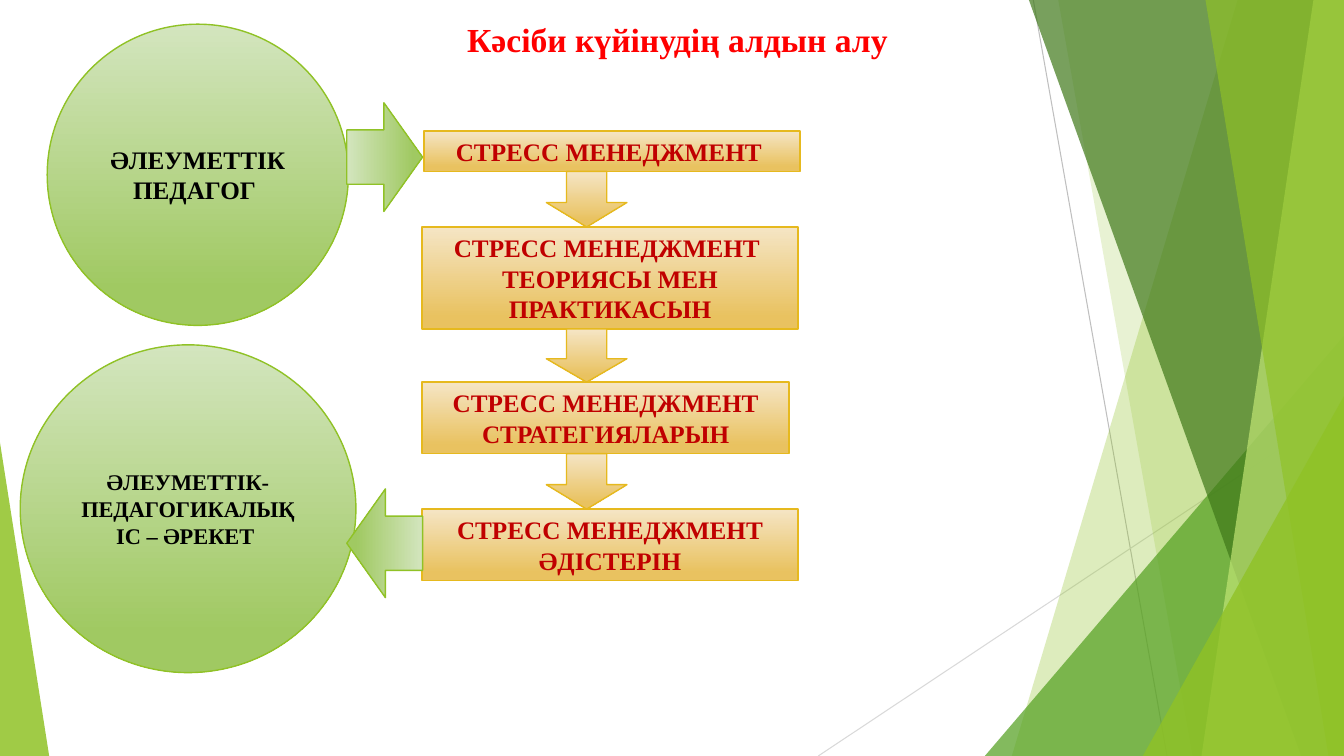
from dataclasses import dataclass
from itertools import pairwise
from lxml.etree import SubElement
from pptx import Presentation
from pptx.dml.color import RGBColor as Rgb
from pptx.enum.shapes import MSO_CONNECTOR as Link, MSO_SHAPE as Kind
from pptx.enum.text import MSO_ANCHOR as Anchor, MSO_AUTO_SIZE as Auto, PP_ALIGN as Align
from pptx.oxml.ns import qn
from pptx.util import Cm, Pt

WIDE, HIGH = 33.87, 19.05  # all lengths in cm

TITLE = "Кәсіби күйінудің алдын алу "
TITLE_AT = (8.71, 0.36, 16.94, 1.27)

# place, paragraphs
STEPS = [
    ((10.69, 3.3, 9.47, 1.02), ["СТРЕСС МЕНЕДЖМЕНТ "]),
    ((10.64, 5.72, 9.47, 2.57), ["СТРЕСС МЕНЕДЖМЕНТ ", "ТЕОРИЯСЫ МЕН ПРАКТИКАСЫН"]),
    ((10.64, 9.63, 9.25, 1.8), ["СТРЕСС МЕНЕДЖМЕНТ СТРАТЕГИЯЛАРЫН"]),
    ((10.64, 12.83, 9.47, 1.8), ["СТРЕСС МЕНЕДЖМЕНТ ӘДІСТЕРІН"]),
]
DOWN_LEFT, DOWN_WIDE = 13.77, 2.03

# place, text, size role
ROLES = [
    ((1.19, 0.61, 7.59, 7.59), "ӘЛЕУМЕТТІК ПЕДАГОГ ", "body"),
    ((0.51, 8.69, 8.46, 8.26), "ӘЛЕУМЕТТІК-ПЕДАГОГИКАЛЫҚ ІС – ӘРЕКЕТ ", "small"),
]
# preset, top, gradient angle
SIDES = [(Kind.RIGHT_ARROW, 2.59, 0), (Kind.LEFT_ARROW, 12.32, 180)]
SIDE_LEFT, SIDE_WIDE, SIDE_HIGH = 8.74, 1.91, 2.74

# start, end, colour
RAYS = [
    ((26.04, 0), (29.41, HIGH), "BFBFBF"),
    ((WIDE, 10.24), (20.62, HIGH), "D9D9D9"),
]
# corner points, colour, opacity in percent
FACETS = [
    ([(31.19, 0), (WIDE, 0), (WIDE, HIGH), (25.5, HIGH)], "90C226", 30),
    ([(26.67, 0), (WIDE, 0), (WIDE, HIGH), (30.05, HIGH)], "90C226", 20),
    ([(WIDE, 8.46), (WIDE, HIGH), (24.82, HIGH)], "54A021", 72),
    ([(25.93, 0), (WIDE, 0), (WIDE, HIGH), (32.79, HIGH)], "3F7819", 70),
    ([(33.1, 0), (WIDE, 0), (WIDE, HIGH), (30.28, HIGH)], "C0E474", 70),
    ([(30.38, 0), (WIDE, 0), (WIDE, HIGH), (33.48, HIGH)], "90C226", 65),
    ([(WIDE, 9.98), (WIDE, HIGH), (28.8, HIGH)], "90C226", 80),
    ([(0, 11.15), (1.24, HIGH), (0, HIGH)], "90C226", 85),
]


@dataclass(frozen=True)
class Theme:
    font: str = "Times New Roman"
    title: int = 24
    body: int = 18
    small: int = 16
    head: str = "FF0000"
    step: str = "C00000"
    role: str = "000000"
    gold: tuple = ("F5E5C5", "E9C260", "E6B91E")  # light, dark, edge
    green: tuple = ("D3E5BE", "A0C962", "90C226")


LOOK = Theme()


def rgb(code):
    return Rgb.from_string(code)


def write(shape, lines, size, color):
    frame = shape.text_frame
    frame.text = "\n".join(lines)
    frame.word_wrap = True
    style = {"name": LOOK.font, "size": Pt(size), "bold": True}
    for para in frame.paragraphs:
        para.alignment = Align.CENTER
        for run in para.runs:
            for key, value in style.items():
                setattr(run.font, key, value)
            run.font.color.rgb = rgb(color)


def block(slide, kind, place, tones, angle=270, bends=()):
    """Add a preset shape with a gradient; the angle runs counter-clockwise."""
    shape = slide.shapes.add_shape(kind, *map(Cm, place))
    shape.shadow.inherit = False
    for i, bend in enumerate(bends):
        shape.adjustments[i] = bend
    light, dark, edge = tones
    shape.fill.gradient()
    shape.fill.gradient_angle = angle
    for stop, tone, spot in zip(shape.fill.gradient_stops, (light, dark), (0, 0.88)):
        stop.color.rgb = rgb(tone)
        stop.position = spot
    shape.line.color.rgb = rgb(edge)
    shape.line.width = Pt(1)
    return shape


def ray(slide, start, end, color):
    line = slide.shapes.add_connector(Link.STRAIGHT, *map(Cm, start + end))
    line.line.color.rgb = rgb(color)
    line.line.width = Pt(0.75)
    SubElement(line._element.spPr, qn("a:effectLst"))


def facet(slide, points, color, alpha):
    first, *rest = [(Cm(x), Cm(y)) for x, y in points]
    path = slide.shapes.build_freeform(*first)
    path.add_line_segments(rest, close=True)
    shape = path.convert_to_shape()
    shape.shadow.inherit = False
    shape.line.fill.background()
    shape.fill.solid()
    shape.fill.fore_color.rgb = rgb(color)
    tone = shape._element.spPr.find(".//" + qn("a:srgbClr"))
    SubElement(tone, qn("a:alpha"), val=str(alpha * 1000))


def head(slide):
    title = slide.shapes.title
    for key, value in zip(("left", "top", "width", "height"), TITLE_AT):
        setattr(title, key, Cm(value))
    write(title, [TITLE], LOOK.title, LOOK.head)
    form = {"auto_size": Auto.NONE, "vertical_anchor": Anchor.TOP}
    for key, value in form.items():
        setattr(title.text_frame, key, value)


def main():
    deck = Presentation()
    deck.slide_width, deck.slide_height = Cm(WIDE), Cm(HIGH)
    slide = deck.slides.add_slide(deck.slide_layouts[5])
    for item in RAYS:
        ray(slide, *item)
    for item in FACETS:
        facet(slide, *item)
    head(slide)
    for place, text, size in ROLES:
        disc = block(slide, Kind.OVAL, place, LOOK.green)
        write(disc, [text], getattr(LOOK, size), LOOK.role)
    for place, lines in STEPS:
        box = block(slide, Kind.RECTANGLE, place, LOOK.gold)
        write(box, lines, LOOK.body, LOOK.step)
    for (upper, _), (lower, _) in pairwise(STEPS):
        top = upper[1] + upper[3]
        place = (DOWN_LEFT, top, DOWN_WIDE, lower[1] - top)
        block(slide, Kind.DOWN_ARROW, place, LOOK.gold, bends=(0.5, 0.44))
    for kind, top, angle in SIDES:
        place = (SIDE_LEFT, top, SIDE_WIDE, SIDE_HIGH)
        block(slide, kind, place, LOOK.green, angle, (0.5, 0.51))
    deck.save("out.pptx")


if __name__ == "__main__":
    main()
